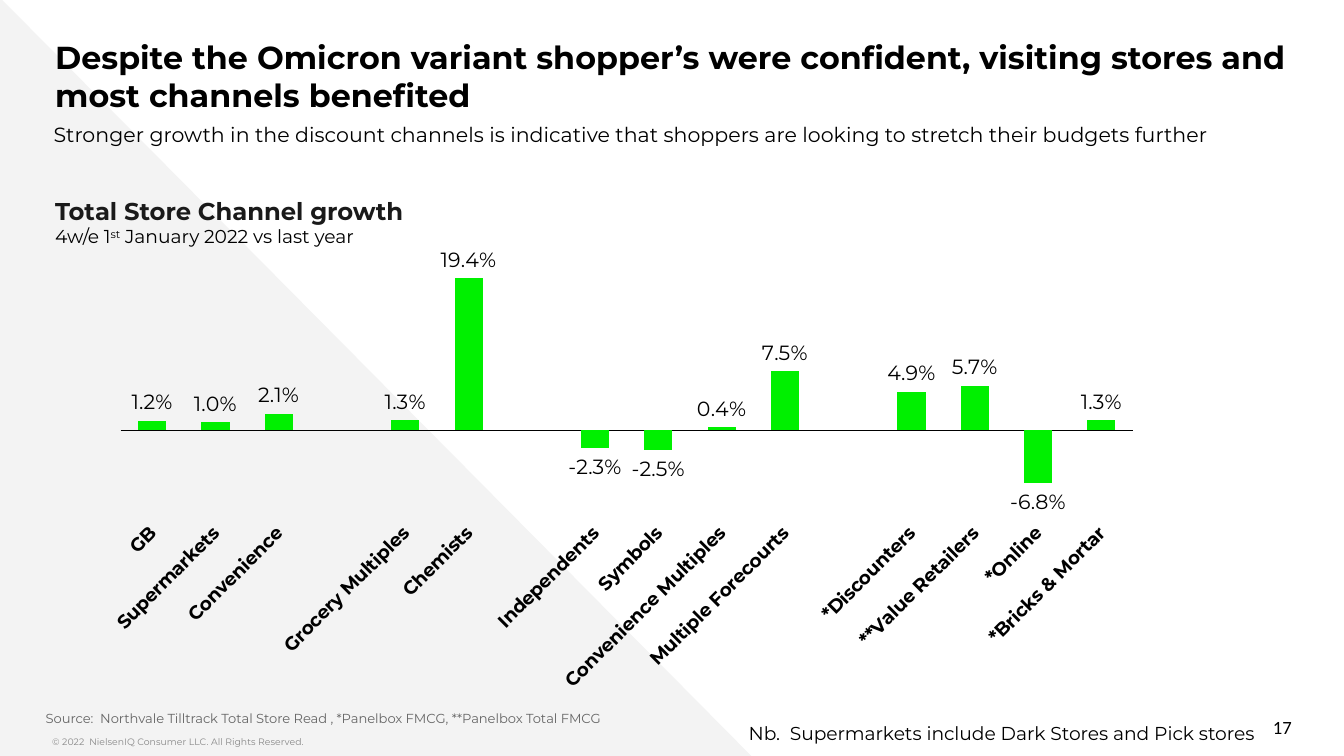
from dataclasses import dataclass

from lxml import etree
from pptx import Presentation
from pptx.chart.data import CategoryChartData
from pptx.dml.color import RGBColor
from pptx.enum.chart import XL_CHART_TYPE, XL_LABEL_POSITION, XL_TICK_LABEL_POSITION, XL_TICK_MARK
from pptx.enum.shapes import MSO_SHAPE
from pptx.enum.text import MSO_ANCHOR, MSO_AUTO_SIZE, PP_ALIGN
from pptx.oxml.ns import qn
from pptx.util import Pt

COLUMN = XL_CHART_TYPE.COLUMN_CLUSTERED
OUTER = XL_LABEL_POSITION.OUTSIDE_END
LOW = XL_TICK_LABEL_POSITION.LOW
NO_TICK = XL_TICK_MARK.NONE
TRIANGLE = MSO_SHAPE.RIGHT_TRIANGLE
TOP, MIDDLE = MSO_ANCHOR.TOP, MSO_ANCHOR.MIDDLE
LEFT, RIGHT = PP_ALIGN.LEFT, PP_ALIGN.RIGHT
NO_FIT = MSO_AUTO_SIZE.NONE

FACE = "Montserrat"
BLACK = "000000"
GREEN = "00F000"


@dataclass
class Note:
    text: str
    area: tuple
    size: float
    color: str = BLACK
    face: str = FACE
    inset: tuple = (0, 3.6)
    align: int = LEFT
    anchor: int = TOP
    wrap: bool = True


NOTES = [
    Note("© 2022  NielsenIQ Consumer LLC. All Rights Reserved.",
         (28, 391, 399, 14.4), 5, "888888"),
    Note("17", (530, 378.7, 162, 21.6), 10, face="Calibri", align=RIGHT, anchor=MIDDLE),
    Note("Source:  Northvale Tilltrack Total Store Read , *Panelbox FMCG, **Panelbox Total FMCG",
         (24.5, 373.7, 630, 14.4), 7, "666666", inset=(0, 7.2)),
    Note("Nb.  Supermarkets include Dark Stores and Pick stores",
         (386.6, 383, 292.4, 19.4), 10, inset=(7.2, 3.6), align=RIGHT, wrap=False),
    Note("Stronger growth in the discount channels is indicative that shoppers "
         "are looking to stretch their budgets further",
         (21.6, 62, 686, 21), 11, inset=(7.2, 3.6)),
]

# Channels and growth; None leaves a gap between groups
GROWTH = [
    ("GB", 0.012), ("Supermarkets", 0.01), ("Convenience", 0.021), ("", None),
    ("Grocery Multiples", 0.013), ("Chemists", 0.194), ("", None),
    ("Independents", -0.023), ("Symbols", -0.025), ("Convenience Multiples", 0.004),
    ("Multiple Forecourts", 0.075), ("", None),
    ("*Discounters", 0.049), ("**Value Retailers", 0.057), ("*Online", -0.068),
    ("*Bricks & Mortar", 0.013),
]


def tint(code: str) -> RGBColor:
    return RGBColor.from_string(code)


def style(font, size: float, color: str = BLACK, face: str = FACE, bold: bool = False) -> None:
    font.size, font.name, font.bold = Pt(size), face, bold
    font.color.rgb = tint(color)


def set_frame(frame, inset: tuple, anchor: int = TOP, wrap: bool = True) -> None:
    frame.margin_left = frame.margin_right = Pt(inset[0])
    frame.margin_top = frame.margin_bottom = Pt(inset[1])
    frame.vertical_anchor, frame.word_wrap = anchor, wrap
    frame.auto_size = NO_FIT


def add_box(slide, area: tuple):
    return slide.shapes.add_textbox(*map(Pt, area)).text_frame


def add_note(slide, note: Note) -> None:
    frame = add_box(slide, note.area)
    set_frame(frame, note.inset, note.anchor, note.wrap)
    frame.text = note.text
    line = frame.paragraphs[0]
    line.alignment = note.align
    style(line.runs[0].font, note.size, note.color, note.face)


def add_back(slide) -> None:
    shape = slide.shapes.add_shape(TRIANGLE, *map(Pt, (0, -1.2, 402.5, 406.2)))
    shape.shadow.inherit = False
    shape.fill.solid()
    shape.fill.fore_color.rgb = tint("F3F3F3")
    shape.line.fill.background()


def set_title(slide, text: str) -> None:
    title = slide.shapes.title
    title.left, title.top, title.width, title.height = map(Pt, (29.5, 13, 686, 29.5))
    frame = title.text_frame
    set_frame(frame, (0, 7.2))
    frame.text = text
    frame.paragraphs[0].alignment = LEFT
    style(frame.paragraphs[0].runs[0].font, 17, bold=True)


def add_head(slide) -> None:
    frame = add_box(slide, (29.5, 101.5, 299.5, 35.3))
    set_frame(frame, (0, 3.6))
    line = frame.paragraphs[0]
    line.space_after = Pt(12)
    run = line.add_run()
    run.text = "Total Store Channel growth"
    style(run.font, 13, "1A1A1A", bold=True)
    line.add_line_break()
    for text in ("4w/e 1", "st", " January 2022 vs last year"):
        run = line.add_run()
        run.text = text
        style(run.font, 10)
        if text == "st":
            run.font._element.set("baseline", "30000")


def set_plot(chart, x: float, y: float, w: float, h: float) -> None:
    area = chart._chartSpace.chart.plotArea
    for old in area.findall(qn("c:layout")):
        area.remove(old)
    layout = etree.Element(qn("c:layout"))
    manual = etree.SubElement(layout, qn("c:manualLayout"))
    parts = {"layoutTarget": "inner", "xMode": "edge", "yMode": "edge",
             "x": x, "y": y, "w": w, "h": h}
    for name, value in parts.items():
        etree.SubElement(manual, qn(f"c:{name}")).set("val", str(value))
    area.insert(0, layout)


def add_graph(slide) -> None:
    data = CategoryChartData(number_format="0.0%")
    data.categories = [name for name, _ in GROWTH]
    data.add_series("Series 1", [value for _, value in GROWTH])
    frame = slide.shapes.add_chart(COLUMN, *map(Pt, (59, 123, 565, 253.5)), data)
    chart = frame.chart
    chart.has_legend = chart.has_title = False
    style(chart.font, 10, face="Arial")
    set_plot(chart, 0.01, 0.01, 0.96, 0.58)

    # Axes
    axis = chart.value_axis
    axis.minimum_scale, axis.maximum_scale = -0.1, 0.25
    axis.has_major_gridlines = axis.visible = False
    axis = chart.category_axis
    axis.tick_label_position = LOW
    axis.major_tick_mark = axis.minor_tick_mark = NO_TICK
    axis.format.line.color.rgb = tint(BLACK)
    axis.format.line.width = Pt(0.75)
    style(axis.tick_labels.font, 10, bold=True)
    body = axis._element.find(qn("c:txPr")).find(qn("a:bodyPr"))
    body.set("rot", "-2700000")
    body.set("vert", "horz")

    # Columns and value labels
    plot = chart.plots[0]
    plot.gap_width, plot.vary_by_categories = 125, False
    bars = plot.series[0]
    bars.invert_if_negative = False
    bars.format.fill.solid()
    bars.format.fill.fore_color.rgb = tint(GREEN)
    labels = bars.data_labels
    labels.show_value, labels.position = True, OUTER
    labels.number_format, labels.number_format_is_linked = "0.0%", False
    style(labels.font, 11)


def main() -> None:
    deck = Presentation()
    deck.slide_width, deck.slide_height = Pt(720), Pt(405)
    slide = deck.slides.add_slide(deck.slide_layouts[5])
    set_title(slide, "Despite the Omicron variant shopper’s were confident, "
                     "visiting stores and most channels benefited")
    add_back(slide)
    # Bring the title in front of the backdrop
    slide.shapes._spTree.append(slide.shapes.title._element)
    add_head(slide)
    add_graph(slide)
    for note in NOTES:
        add_note(slide, note)
    deck.save("out.pptx")


if __name__ == "__main__":
    main()
